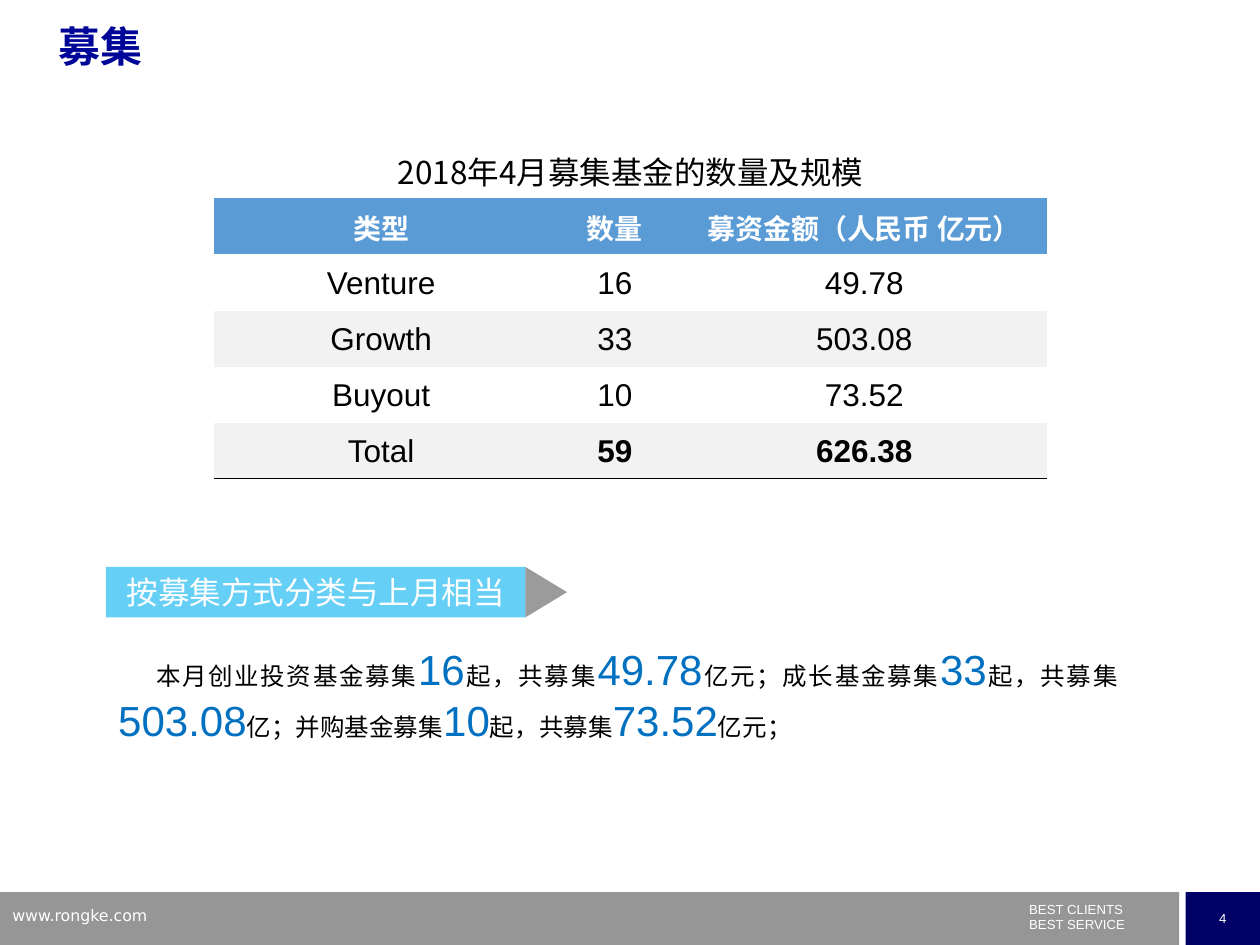
from lxml.etree import SubElement
from pptx import Presentation
from pptx.dml.color import RGBColor
from pptx.enum.shapes import MSO_SHAPE
from pptx.enum.text import MSO_ANCHOR, PP_ALIGN
from pptx.oxml.ns import qn
from pptx.util import Inches, Pt

WHITE = RGBColor(255, 255, 255)
BLACK = RGBColor(0, 0, 0)
GRAY = RGBColor(0x96, 0x96, 0x96)
NAVY = RGBColor(0, 0, 0x66)
TITLE_BLUE = RGBColor(0, 0x07, 0x98)
NUMBER_BLUE = RGBColor(0, 0x70, 0xC0)
LABEL_BLUE = RGBColor(0, 0xB0, 0xF0)
ARROW_GRAY = RGBColor(0x59, 0x59, 0x59)
HEADER_BLUE = RGBColor(0x5B, 0x9B, 0xD5)
BAND_GRAY = RGBColor(0xF2, 0xF2, 0xF2)
CJK = "Noto Sans CJK SC"
TABLE_CJK = "Noto Sans CJK JP"
LATIN = "Arial"
NO_STYLE = "{2D5ABB26-0587-4C30-8999-92F81FD0307C}"


def add_span(para, text, size=18, font=LATIN, color=BLACK, bold=False):
    span = para.add_run()
    span.text = text
    span.font.size = Pt(size)
    span.font.name = font
    span.font.bold = bold
    span.font.color.rgb = color
    east_asian = CJK if font == LATIN else font
    SubElement(span.font._element, qn("a:ea"), typeface=east_asian)


def add_text(page, left, top, width, height):
    frame = page.shapes.add_textbox(
        Inches(left), Inches(top), Inches(width), Inches(height)).text_frame
    frame.word_wrap = True
    return frame


def add_block(page, left, top, width, height, fill, kind=MSO_SHAPE.RECTANGLE, opacity=100):
    shape = page.shapes.add_shape(
        kind, Inches(left), Inches(top), Inches(width), Inches(height))
    shape.shadow.inherit = False
    shape.fill.solid()
    shape.fill.fore_color.rgb = fill
    shape.line.fill.background()
    if opacity < 100:
        color = shape._element.spPr.find(qn("a:solidFill"))[0]
        SubElement(color, qn("a:alpha"), val=str(opacity * 1000))
    return shape


def center_text(frame, text, **style):
    frame.vertical_anchor = MSO_ANCHOR.MIDDLE
    para = frame.paragraphs[0]
    para.alignment = PP_ALIGN.CENTER
    add_span(para, text, **style)


def add_footer(page, left, top, width, height):
    add_block(page, left, top, width - 0.64, height, GRAY)
    number = add_block(page, left + width - 0.59, top, 0.59, height, NAVY)
    number.text_frame.word_wrap = False
    center_text(number.text_frame, "4", size=7.5, color=WHITE)

    slogan = add_text(page, left + 8.07, top + 0.06, 1.5, 0.29)
    slogan.margin_top = Inches(0.07)
    for index, text in enumerate(("BEST CLIENTS", "BEST SERVICE")):
        para = slogan.add_paragraph() if index else slogan.paragraphs[0]
        para.line_spacing = 0.5
        if index:
            para.space_before = Pt(4)
        add_span(para, text, size=7.5, color=WHITE)

    address = add_text(page, left, top + 0.06, 2.4, 0.26)
    add_span(address.paragraphs[0], "www.rongke.com", size=9, font="DejaVu Sans", color=WHITE)


def add_title(page, left, top, width, height):
    para = add_text(page, left, top, width, height).paragraphs[0]
    para.line_spacing = 0.9
    add_span(para, "募集", size=24, color=TITLE_BLUE, bold=True)


def fill_cell(cell, text, fill=None, **style):
    cell.margin_left = cell.margin_right = cell.margin_top = Inches(0.01)
    cell.margin_bottom = 0
    cell.vertical_anchor = MSO_ANCHOR.MIDDLE
    center_text(cell.text_frame, text, **style)
    if fill is None:
        cell.fill.background()
    else:
        cell.fill.solid()
        cell.fill.fore_color.rgb = fill


def add_bottom_border(cell):
    border = cell._tc.get_or_add_tcPr()
    line = border.makeelement(qn("a:lnB"), {"w": str(Pt(1))})
    border.insert(0, line)
    SubElement(SubElement(line, qn("a:solidFill")), qn("a:srgbClr"), val=str(BLACK))


def add_fund_table(page, left, top, width, height):
    header = ("类型", "数量", "募资金额（人民币 亿元）")
    funds = (
        ("Venture", "16", "49.78"),
        ("Growth", "33", "503.08"),
        ("Buyout", "10", "73.52"),
        ("Total", "59", "626.38"),
    )
    table = page.shapes.add_table(
        len(funds) + 2, len(header),
        Inches(left), Inches(top), Inches(width), Inches(height)).table
    table.first_row = table.horz_banding = False
    table._tbl.tblPr.find(qn("a:tableStyleId")).text = NO_STYLE
    for column, share in zip(table.columns, (2.65, 1.06, 2.9)):
        column.width = Inches(width * share / 6.61)

    table.cell(0, 0).merge(table.cell(0, len(header) - 1))
    fill_cell(table.cell(0, 0), "2018年4月募集基金的数量及规模", font=TABLE_CJK)
    for column, text in enumerate(header):
        fill_cell(table.cell(1, column), text, fill=HEADER_BLUE,
                  size=16, font=CJK, color=WHITE, bold=True)
    for row, fund in enumerate(funds):
        is_total = row == len(funds) - 1
        for column, text in enumerate(fund):
            cell = table.cell(row + 2, column)
            fill_cell(cell, text, fill=BAND_GRAY if row % 2 else None,
                      bold=is_total and column > 0)
            if is_total:
                add_bottom_border(cell)


def add_label(page, left, top, width, height):
    label = add_block(page, left, top, width, height, LABEL_BLUE, opacity=60)
    label.text_frame.word_wrap = True
    center_text(label.text_frame, "按募集方式分类与上月相当", font=CJK, color=WHITE)
    depth = 0.33
    arrow = add_block(page, left + width + (depth - height) / 2, top + (height - depth) / 2,
                      height, depth, ARROW_GRAY, MSO_SHAPE.ISOSCELES_TRIANGLE, 60)
    arrow.rotation = 90


def add_summary(page, left, top, width, height):
    parts = (
        ("本月创业投资基金募集", "16"), ("起，共募集", "49.78"),
        ("亿元；成长基金募集", "33"), ("起，共募集", "503.08"),
        ("亿；并购基金募集", "10"), ("起，共募集", "73.52"),
    )
    para = add_text(page, left, top, width, height).paragraphs[0]
    para.alignment = PP_ALIGN.JUSTIFY
    para._p.get_or_add_pPr().set("indent", str(Inches(0.3)))
    for words, number in parts:
        add_span(para, words, size=14, font=CJK)
        add_span(para, number, size=24, color=NUMBER_BLUE)
    add_span(para, "亿元；", size=14, font=CJK)


def main():
    deck = Presentation()
    deck.slide_width = Inches(10)
    deck.slide_height = Inches(7.5)
    page = deck.slides.add_slide(deck.slide_layouts[6])
    add_footer(page, 0, 7.08, 10, 0.42)
    add_summary(page, 0.84, 5.06, 8.13, 0.91)
    add_label(page, 0.84, 4.5, 3.33, 0.4)
    add_title(page, 0.37, 0.16, 9, 0.7)
    add_fund_table(page, 1.7, 1.13, 6.61, 2.67)
    deck.save("out.pptx")


if __name__ == "__main__":
    main()
